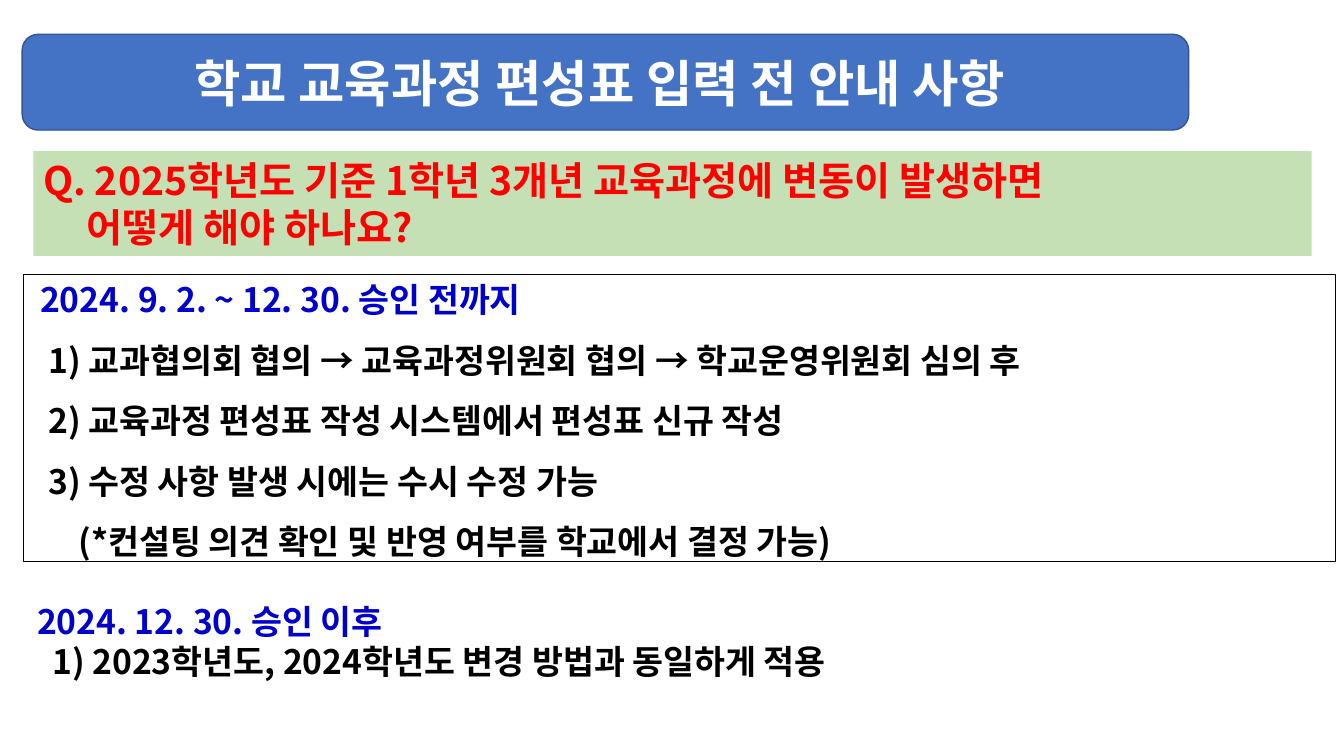
import pptx
import pptx.dml.color
import pptx.enum.shapes
import pptx.enum.text
import pptx.oxml.ns
import pptx.util
import lxml.etree

Inches = pptx.util.Inches
Shapes = pptx.enum.shapes.MSO_SHAPE
Anchor = pptx.enum.text.MSO_ANCHOR
Align = pptx.enum.text.PP_ALIGN
FONT = "Noto Sans CJK KR"
RED, BLUE, BLACK, WHITE = "FF0000", "0000CC", "000000", "FFFFFF"


def rgb(value):
    return pptx.dml.color.RGBColor.from_string(value)


def write(box, size, lines, anchor=Anchor.TOP, align=Align.LEFT):
    frame = box.text_frame
    frame.word_wrap = True
    frame.auto_size = pptx.enum.text.MSO_AUTO_SIZE.NONE
    frame.vertical_anchor = anchor
    for number, (text, color, indent, spacing) in enumerate(lines):
        para = frame.add_paragraph() if number else frame.paragraphs[0]
        para.alignment = align
        para.line_spacing = spacing
        para._p.get_or_add_pPr().set("marL", str(Inches(indent)))
        span = para.add_run()
        span.text = text
        span.font.size = pptx.util.Pt(size)
        span.font.bold = True
        span.font.color.rgb = rgb(color)
        span.font.name = FONT
        east_asian = lxml.etree.SubElement(span.font._element, pptx.oxml.ns.qn("a:ea"))
        east_asian.set("typeface", FONT)


deck = pptx.Presentation()
deck.slide_width = Inches(13.33)
deck.slide_height = Inches(7.5)
page = deck.slides.add_slide(deck.slide_layouts[5])

panels = []
for preset, left, top, width, height, fill, line, weight in [
    (Shapes.RECTANGLE, 0.33, 1.5, 12.68, 1.04, "C5E0B4", None, 0),
    (Shapes.RECTANGLE, 0.23, 2.72, 13.01, 2.85, None, BLACK, 0.25),
    (Shapes.ROUNDED_RECTANGLE, 0.22, 0.34, 11.57, 0.95, "4472C4", "325491", 1),
]:
    panel = page.shapes.add_shape(preset, Inches(left), Inches(top), Inches(width), Inches(height))
    panel.shadow.inherit = False
    if fill:
        panel.fill.solid()
        panel.fill.fore_color.rgb = rgb(fill)
    else:
        panel.fill.background()
    if line:
        panel.line.color.rgb = rgb(line)
        panel.line.width = pptx.util.Pt(weight)
    else:
        panel.line.fill.background()
    panels.append(panel)
question, before_approval, banner = panels

title = page.shapes.title
title.left, title.top = banner.left, banner.top
title.width, title.height = banner.width, banner.height
banner._element.addnext(title._element)
write(title, 36, [("학교 교육과정 편성표 입력 전 안내 사항 ", WHITE, 0, 1)], Anchor.MIDDLE, Align.CENTER)

write(question, 28, [
    ("Q. 2025학년도 기준 1학년 3개년 교육과정에 변동이 발생하면", RED, 0, 1),
    ("어떻게 해야 하나요?", RED, 0.43, 1),
])

write(before_approval, 24, [
    ("2024. 9. 2. ~ 12. 30. 승인 전까지", BLUE, 0.07, 1),
    ("1) 교과협의회 협의 → 교육과정위원회 협의 → 학교운영위원회 심의 후", BLACK, 0.15, 1.5),
    ("2) 교육과정 편성표 작성 시스템에서 편성표 신규 작성", BLACK, 0.15, 1.5),
    ("3) 수정 사항 발생 시에는 수시 수정 가능", BLACK, 0.15, 1.5),
    ("(*컨설팅 의견 확인 및 반영 여부를 학교에서 결정 가능)", BLACK, 0.45, 1.5),
])

after_approval = page.shapes.add_textbox(Inches(0.27), Inches(5.71), Inches(12.97), Inches(1.11))
write(after_approval, 24, [
    ("2024. 12. 30. 승인 이후", BLUE, 0, 1.5),
    ("1) 2023학년도, 2024학년도 변경 방법과 동일하게 적용", BLACK, 0.15, 1),
])

deck.save("out.pptx")
